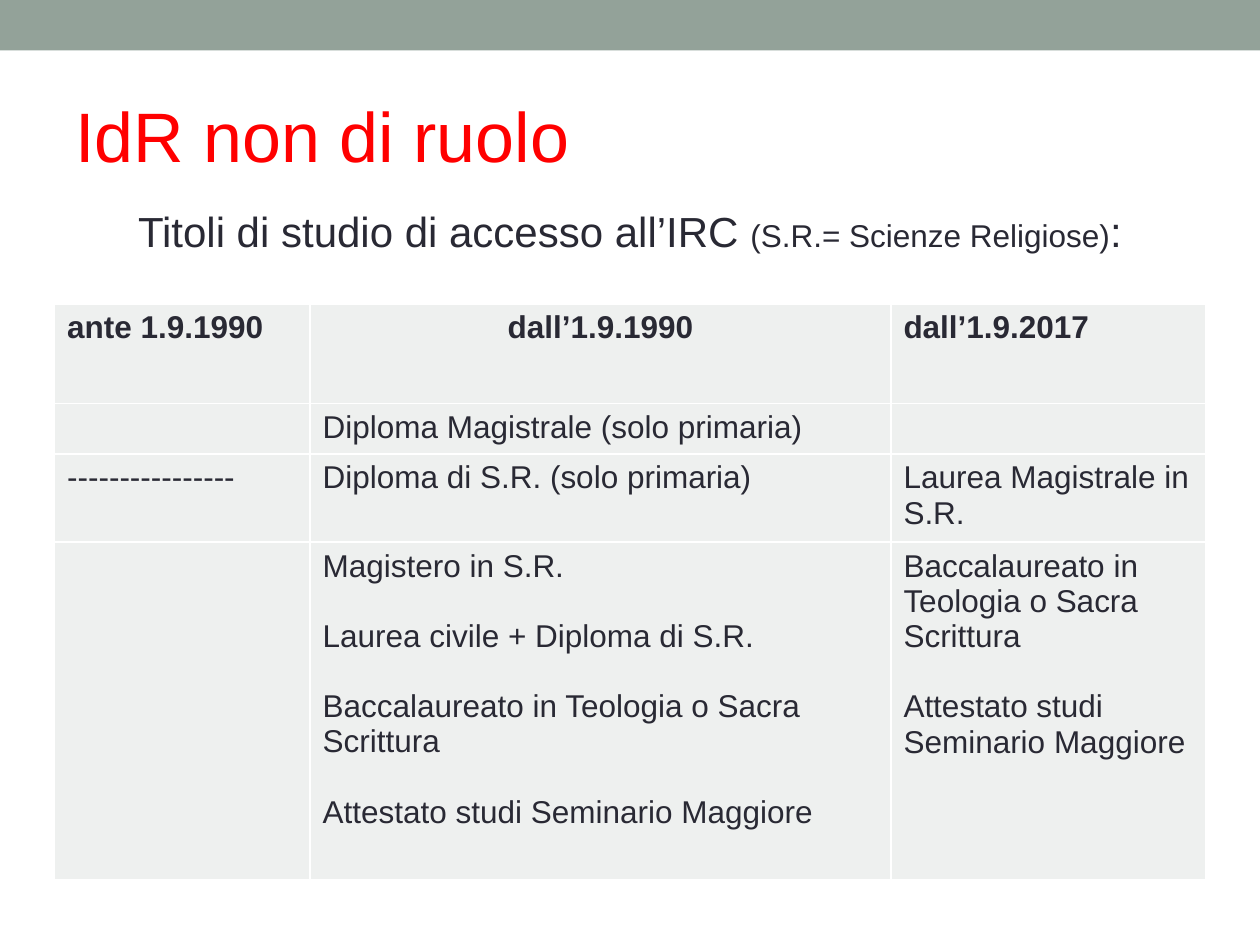
from dataclasses import dataclass

from lxml import etree
from pptx import Presentation
from pptx.dml.color import RGBColor
from pptx.enum.shapes import MSO_SHAPE
from pptx.enum.text import MSO_ANCHOR, PP_ALIGN
from pptx.oxml.ns import qn
from pptx.util import Cm, Pt

RECTANGLE = MSO_SHAPE.RECTANGLE
TOP, MIDDLE = MSO_ANCHOR.TOP, MSO_ANCHOR.MIDDLE
LEFT, CENTER = PP_ALIGN.LEFT, PP_ALIGN.CENTER


@dataclass(frozen=True)
class Theme:
    font: str = "Arial"
    band: str = "93A299"
    title: str = "FF0000"
    text: str = "292934"
    cell: str = "EEF0EF"
    border: str = "FFFFFF"
    title_size: int = 40
    lead_size: int = 24
    body_size: int = 18
    paragraph_gap: int = 20
    border_width: int = 1


THEME = Theme()

COLUMN_WIDTHS = [5.15, 11.71, 6.35]
ROW_HEIGHTS = [2, 1.02, 1.78, 6.81]
# Each cell is a list of paragraphs
ROWS = [
    [["ante 1.9.1990"], ["dall’1.9.1990"], ["dall’1.9.2017"]],
    [[], ["Diploma Magistrale (solo primaria)"], []],
    [["-" * 16], ["Diploma di S.R. (solo primaria)"], ["Laurea Magistrale in S.R."]],
    [
        [],
        [
            "Magistero in S.R.",
            "Laurea civile + Diploma di S.R.",
            "Baccalaureato in Teologia o Sacra Scrittura",
            "Attestato studi Seminario Maggiore",
        ],
        [
            "Baccalaureato in Teologia o Sacra Scrittura",
            "Attestato studi Seminario Maggiore",
        ],
    ],
]


def style_font(font, size, color, bold=False):
    font.name = THEME.font
    font.size = Pt(size)
    font.bold = bold
    font.color.rgb = RGBColor.from_string(color)


def add_band(s, width, height):
    sp = s.shapes.add_shape(RECTANGLE, 0, 0, width, height)
    sp.shadow.inherit = False
    sp.fill.solid()
    sp.fill.fore_color.rgb = RGBColor.from_string(THEME.band)
    sp.line.fill.background()


def add_text(s, top, height, inset_top, runs, color, anchor=TOP, align=LEFT):
    """Add a one-paragraph text box; runs are (text, size) pairs."""
    tf = s.shapes.add_textbox(Cm(1.27), Cm(top), Cm(22.86), Cm(height)).text_frame
    tf.word_wrap = True
    tf.margin_top = Cm(inset_top)
    tf.vertical_anchor = anchor
    p = tf.paragraphs[0]
    p.alignment = align
    for text, size in runs:
        r = p.add_run()
        r.text = text
        style_font(r.font, size, color)


def set_borders(cell):
    tc_pr = cell._tc.get_or_add_tcPr()
    for side in ("a:lnL", "a:lnR", "a:lnT", "a:lnB"):
        ln = etree.SubElement(tc_pr, qn(side), w=str(Pt(THEME.border_width)))
        fill = etree.SubElement(ln, qn("a:solidFill"))
        etree.SubElement(fill, qn("a:srgbClr"), val=THEME.border)


def fill_cell(cell, paragraphs, bold, align):
    set_borders(cell)
    cell.fill.solid()
    cell.fill.fore_color.rgb = RGBColor.from_string(THEME.cell)
    tf = cell.text_frame
    tf.text = "\n".join(paragraphs)
    for i, p in enumerate(tf.paragraphs):
        p.alignment = align
        style_font(p.font, THEME.body_size, THEME.text, bold)
        if i:
            p.space_before = Pt(THEME.paragraph_gap)


def add_qualifications_table(s):
    table = s.shapes.add_table(
        len(ROWS), len(COLUMN_WIDTHS), Cm(1.1), Cm(6.13),
        Cm(sum(COLUMN_WIDTHS)), Cm(sum(ROW_HEIGHTS)),
    ).table
    table.horz_banding = False
    for column, width in zip(table.columns, COLUMN_WIDTHS):
        column.width = Cm(width)
    for i, (row, height) in enumerate(zip(ROWS, ROW_HEIGHTS)):
        table.rows[i].height = Cm(height)
        for j, paragraphs in enumerate(row):
            header = i == 0
            align = CENTER if header and j == 1 else LEFT
            fill_cell(table.cell(i, j), paragraphs, header, align)


def main():
    prs = Presentation()
    prs.slide_width, prs.slide_height = Cm(25.4), Cm(19.05)
    s = prs.slides.add_slide(prs.slide_layouts[6])
    add_band(s, prs.slide_width, Cm(1.02))
    add_text(s, 1.47, 2.24, 0.37, [("IdR non di ruolo", THEME.title_size)],
             THEME.title, anchor=MIDDLE)
    lead = [
        ("Titoli di studio di accesso all’IRC ", THEME.lead_size),
        ("(S.R.= Scienze Religiose)", THEME.body_size),
        (":", THEME.lead_size),
    ]
    add_text(s, 3.94, 14.07, 0.2, lead, THEME.text, align=CENTER)
    add_qualifications_table(s)
    prs.save("out.pptx")


if __name__ == "__main__":
    main()
